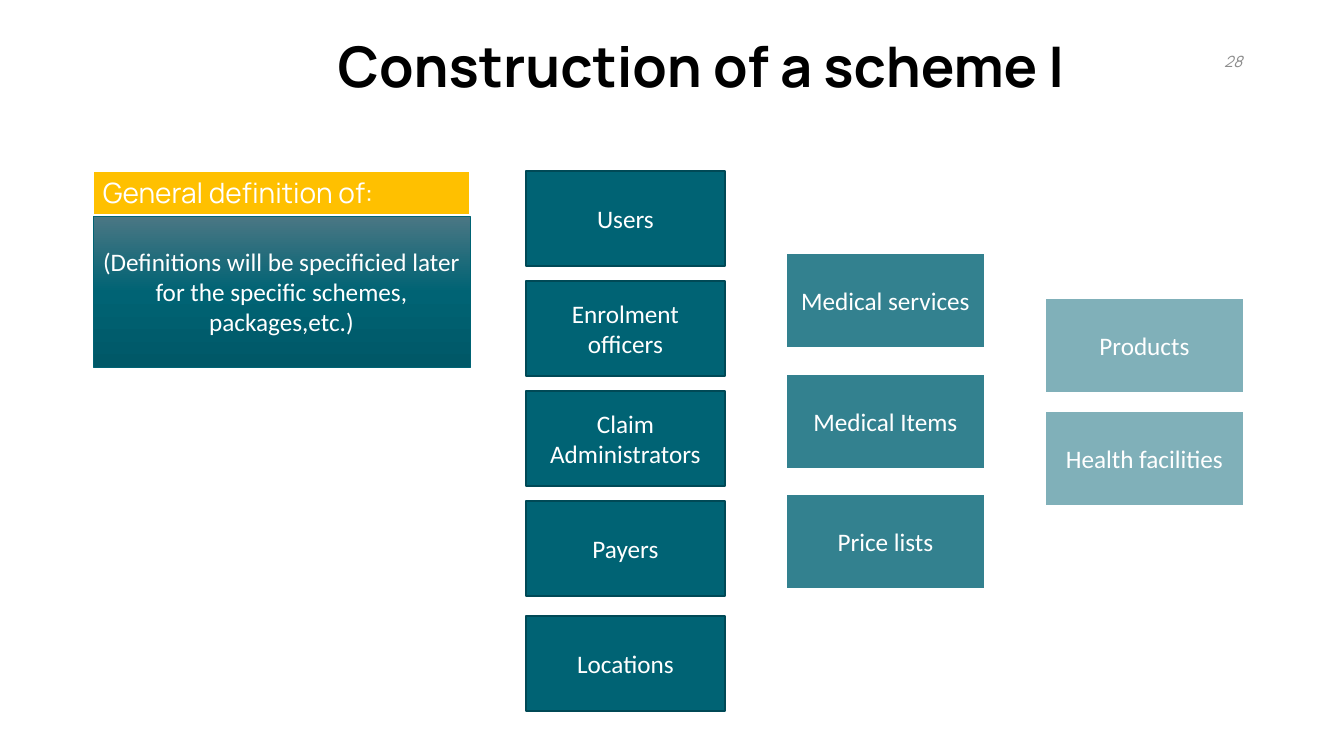
import copy

import pptx
import pptx.dml.color
import pptx.enum.shapes
import pptx.enum.text
import pptx.oxml.ns
import pptx.util

PX = 914400 / 100.8
COLOURS = {
    "white": "FFFFFF", "black": "000000", "grey": "8C8C8C", "amber": "FFC000",
    "teal": "006374", "teal edge": "004956", "mid teal": "33818F",
    "pale teal": "80B0B9", "slate": "4B7784", "deep teal": "005867",
}
ALIGN = pptx.enum.text.PP_ALIGN
ANCHOR = pptx.enum.text.MSO_ANCHOR


def rgb(name):
    return pptx.dml.color.RGBColor.from_string(COLOURS[name])


def write(target, box, words, size, font="Calibri", colour="white",
          align=ALIGN.CENTER, anchor=ANCHOR.MIDDLE):
    target.left, target.top, target.width, target.height = [round(n * PX) for n in box]
    frame = target.text_frame
    frame.word_wrap = True
    frame.auto_size = pptx.enum.text.MSO_AUTO_SIZE.NONE
    frame.vertical_anchor = anchor
    paragraph = frame.paragraphs[0]
    paragraph.alignment = align
    run = paragraph.add_run()
    run.text = words
    run.font.name = font
    run.font.size = pptx.util.Pt(size)
    run.font.color.rgb = rgb(colour)
    return run


deck = pptx.Presentation()
deck.slide_width = round(1344 * PX)
deck.slide_height = round(756 * PX)
slide = deck.slides.add_slide(deck.slide_layouts[5])

heading = write(slide.shapes.title, (194, 17, 1014, 104),
                "Construction of a scheme I", 40, "Manrope", "black")
heading.font.bold = True
slide.shapes.title.text_frame.paragraphs[0].line_spacing = 0.9

page_number = write(slide.shapes.add_textbox(0, 0, 0, 0), (950, 41, 302, 40),
                    "28", 11, "Manrope", "grey", ALIGN.RIGHT)
page_number.font.italic = True

RECTANGLE = pptx.enum.shapes.MSO_SHAPE.RECTANGLE
columns = [
    (526, "teal", "teal edge", 1,
     [(171, "Users"), (281, "Enrolment officers"), (391, "Claim Administrators"),
      (501, "Payers"), (616, "Locations")]),
    (786, "mid teal", "white", 1.5,
     [(253, "Medical services"), (374, "Medical Items"), (494, "Price lists")]),
    (1045, "pale teal", "white", 1.5,
     [(298, "Products"), (411, "Health facilities")]),
]
blocks = [
    ((left, top, 199, 95), fill, edge, weight, words)
    for left, fill, edge, weight, entries in columns
    for top, words in entries
]
blocks.append(((93, 216, 377, 151), None, "teal", 0.5,
               "(Definitions will be specificied later for the specific schemes, packages,etc.)"))
blocks.append(((93, 171, 377, 44), "amber", "white", 1.5, "General definition of:"))

for box, fill, edge, weight, words in blocks:
    block = slide.shapes.add_shape(RECTANGLE, 0, 0, 0, 0)
    block.shadow.inherit = False
    block.line.color.rgb = rgb(edge)
    block.line.width = pptx.util.Pt(weight)
    if fill:
        block.fill.solid()
        block.fill.fore_color.rgb = rgb(fill)
    else:
        block.fill.gradient()
        block.fill.gradient_angle = 270
        stops = block._element.spPr.find(".//" + pptx.oxml.ns.qn("a:gsLst"))
        stops.insert(1, copy.deepcopy(stops[0]))
        shades = [(0, "slate"), (0.5, "teal"), (1, "deep teal")]
        for stop, (position, shade) in zip(block.fill.gradient_stops, shades):
            stop.position = position
            stop.color.rgb = rgb(shade)
    if fill == "amber":
        write(block, box, words, 20, "Manrope", align=ALIGN.LEFT, anchor=ANCHOR.TOP)
    else:
        write(block, box, words, 18)

deck.save("out.pptx")
